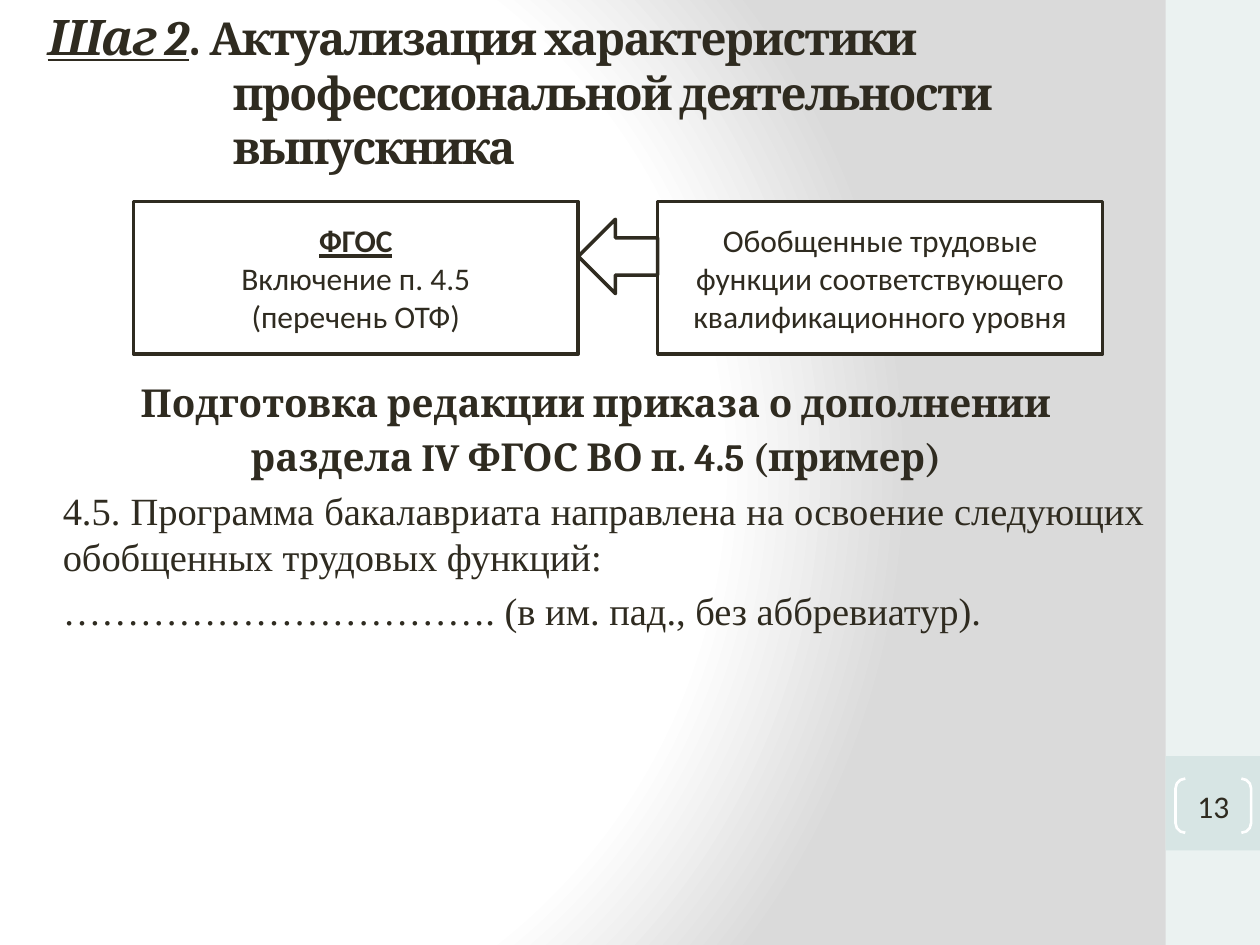
from dataclasses import dataclass

from lxml import etree
from pptx import Presentation
from pptx.dml.color import RGBColor
from pptx.enum.shapes import MSO_SHAPE as Shape
from pptx.enum.text import MSO_ANCHOR as Anchor, PP_ALIGN as Align
from pptx.oxml.ns import qn
from pptx.util import Inches, Pt


@dataclass(frozen=True)
class Theme:
    ink: str = "2F2B20"
    white: str = "FFFFFF"
    shade: str = "DADADA"
    band: str = "EBF2F1"
    tab: str = "D7E5E4"
    sans: str = "Calibri"
    serif: str = "Cambria"
    roman: str = "Times New Roman"
    step: int = 28
    title: int = 26
    body: int = 22
    label: int = 18


T = Theme()
W, H = 10, 7.5


def rgb(value):
    return RGBColor.from_string(value)


def set_background(s):
    """Radial gradient, white from the left and grey at the far right."""
    s.background.fill.gradient()
    grad = next(s.element.iter(qn("a:gradFill")))
    for child in list(grad):
        grad.remove(child)
    stops = etree.SubElement(grad, qn("a:gsLst"))
    for pos, color in ((0, T.white), (75, T.white), (100, T.shade)):
        stop = etree.SubElement(stops, qn("a:gs"), pos=str(pos * 1000))
        etree.SubElement(stop, qn("a:srgbClr"), val=color)
    path = etree.SubElement(grad, qn("a:path"), path="circle")
    etree.SubElement(path, qn("a:fillToRect"),
                     l="20000", t="50000", r="100000", b="50000")


def add_shape(s, kind, box, fill=None, line=None, width=2):
    sp = s.shapes.add_shape(kind, *map(Inches, box))
    sp.shadow.inherit = False
    if fill:
        sp.fill.solid()
        sp.fill.fore_color.rgb = rgb(fill)
    else:
        sp.fill.background()
    if line:
        sp.line.color.rgb = rgb(line)
        sp.line.width = Pt(width)
    else:
        sp.line.fill.background()
    return sp


def add_textbox(s, box):
    tf = s.shapes.add_textbox(*map(Inches, box)).text_frame
    tf.word_wrap = True
    return tf


def style(r, font, size, bold=False, italic=False, underline=False):
    f = r.font
    f.name, f.size, f.color.rgb = font, Pt(size), rgb(T.ink)
    f.bold, f.italic, f.underline = bold, italic, underline


def write_lines(tf, lines, font, size, align=Align.CENTER):
    tf.text = "\n".join(lines)
    for p in tf.paragraphs:
        p.alignment = align
        for r in p.runs:
            style(r, font, size)
    return tf.paragraphs


def set_indent(p, left, first=0):
    pPr = p._p.get_or_add_pPr()
    pPr.set("marL", str(Inches(left)))
    pPr.set("indent", str(Inches(first)))


def add_side_band(s, box, number):
    x, y, w, h = box
    add_shape(s, Shape.RECTANGLE, box, T.band)
    tab_y = y + 0.8 * h
    add_shape(s, Shape.RECTANGLE, (x, tab_y, w, w), T.tab)
    sp = add_shape(s, Shape.DOUBLE_BRACKET,
                   (x + 0.08, tab_y + 0.18, 0.8 * w, 0.43),
                   line=T.white, width=1.5)
    sp.adjustments[0] = 0.18
    tf = sp.text_frame
    tf.margin_left = tf.margin_right = tf.margin_top = tf.margin_bottom = 0
    tf.vertical_anchor = Anchor.MIDDLE
    write_lines(tf, [number], T.sans, T.label)


def add_title(s, box):
    tf = add_textbox(s, box)
    tf.vertical_anchor = Anchor.MIDDLE
    p = tf.paragraphs[0]
    set_indent(p, 1.47, -1.47)
    for text, size, marked in (
        ("Шаг 2", T.step, True),
        (". ", T.step, False),
        ("Актуализация характеристики профессиональной деятельности выпускника",
         T.title, False),
    ):
        r = p.add_run()
        r.text = text
        style(r, T.serif, size, bold=True, italic=marked, underline=marked)
        r.font._element.set("spc", "-100")


def add_flow(s, box):
    """Two framed boxes, the right one pointing to the left one."""
    x, y, w, h = box
    gap = 0.63
    card_w = (w - gap) / 2
    cards = (
        ["ФГОС", "Включение п. 4.5", "(перечень ОТФ)"],
        ["Обобщенные трудовые функции соответствующего квалификационного уровня"],
    )
    for i, lines in enumerate(cards):
        sp = add_shape(s, Shape.RECTANGLE,
                       (x + i * (card_w + gap), y, card_w, h), T.white, T.ink)
        tf = sp.text_frame
        tf.word_wrap = True
        tf.vertical_anchor = Anchor.MIDDLE
        paragraphs = write_lines(tf, lines, T.sans, T.label)
        if i == 0:
            style(paragraphs[0].runs[0], T.sans, T.label,
                  bold=True, underline=True)
    add_shape(s, Shape.LEFT_ARROW, (x + card_w, y + 0.14, gap, 0.59),
              T.white, T.ink)


def add_order_text(s, box):
    heading = ["Подготовка редакции приказа о дополнении",
               "раздела IV ФГОС ВО п. 4.5 (пример)"]
    clause = ["4.5. Программа бакалавриата направлена на освоение следующих "
              "обобщенных трудовых функций:",
              "……………………………. (в им. пад., без аббревиатур)."]
    paragraphs = write_lines(add_textbox(s, box), heading + clause,
                             T.roman, T.body, Align.JUSTIFY)
    for i, p in enumerate(paragraphs):
        p.space_before = Pt(0.2 * T.body)
        if i < len(heading):
            p.alignment = Align.CENTER
            style(p.runs[0], T.serif, T.body, bold=True)
        else:
            set_indent(p, 0.12)


def main():
    prs = Presentation()
    prs.slide_width, prs.slide_height = Inches(W), Inches(H)
    s = prs.slides.add_slide(prs.slide_layouts[6])
    left = 0.028 * W
    set_background(s)
    add_side_band(s, (0.925 * W, 0, 0.075 * W, H), "13")
    add_flow(s, (0.106 * W, 1.6, 0.769 * W, 1.21))
    add_title(s, (left, 0.36, 0.93 * W, 0.71))
    add_order_text(s, (left, 2.96, 0.89 * W, 4.02))
    prs.save("out.pptx")


if __name__ == "__main__":
    main()
